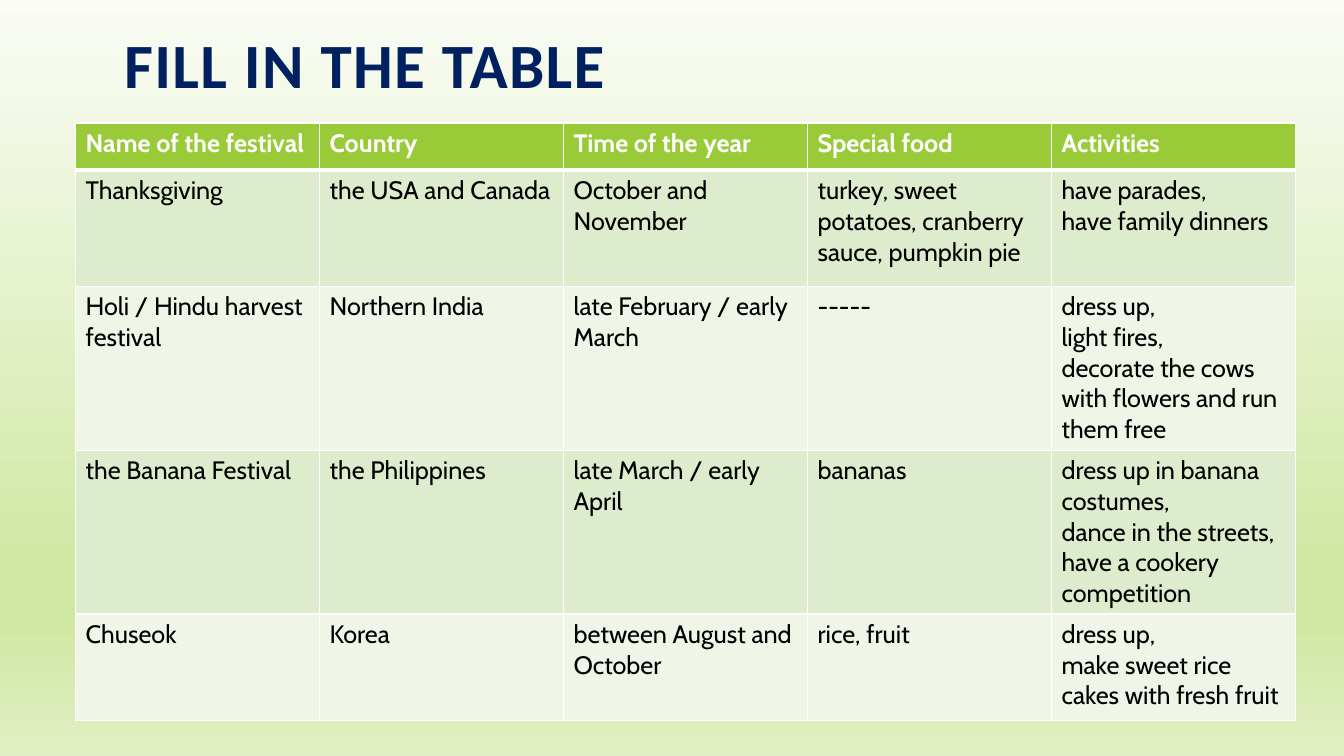
import pptx
import pptx.util
import pptx.dml.color
import pptx.enum.text
import pptx.oxml
import pptx.oxml.ns

RGBColor = pptx.dml.color.RGBColor

TITLE = "FILL IN THE TABLE"
HEADINGS = ["Name of the festival", "Country", "Time of the year", "Special food", "Activities"]
FESTIVALS = [
    ["Thanksgiving", "the USA and Canada", "October and November",
     "turkey, sweet potatoes, cranberry sauce, pumpkin pie",
     "have parades,\nhave family dinners"],
    ["Holi / Hindu harvest festival", "Northern India", "late February / early March",
     "-----",
     "dress up,\nlight fires,\ndecorate the cows with flowers and run them free"],
    ["the Banana Festival", "the Philippines", "late March / early April",
     "bananas",
     "dress up in banana costumes,\ndance in the streets,\nhave a cookery competition"],
    ["Chuseok", "Korea", "between August and October",
     "rice, fruit",
     "dress up,\nmake sweet rice cakes with fresh fruit"],
]

NAVY = RGBColor(0x00, 0x20, 0x60)
WHITE = RGBColor(0xFF, 0xFF, 0xFF)
BLACK = RGBColor(0x00, 0x00, 0x00)
GREEN = RGBColor(0x99, 0xCB, 0x38)
BANDS = [RGBColor(0xDE, 0xEC, 0xCE), RGBColor(0xEF, 0xF6, 0xE8)]
BACKDROP = [
    (0, RGBColor(0xFA, 0xFC, 0xF5)),
    (74, RGBColor(0xD1, 0xE8, 0xA5)),
    (83, RGBColor(0xD1, 0xE8, 0xA5)),
    (100, RGBColor(0xE0, 0xEF, 0xC3)),
]

TITLE_FONT = {"name": "Calibri", "size": pptx.util.Pt(45), "bold": True}
HEADING_FONT = {"name": "Cabin", "size": pptx.util.Pt(18), "bold": True}
BODY_FONT = {**HEADING_FONT, "bold": False}

ROW_HEIGHTS = [0.47, 1.15, 1.06, 1.06, 1.06]
TABLE_LEFT, TABLE_TOP, TABLE_WIDTH = 0.75, 1.22, 12.1
THIN, THICK = 1, 3


def style(font, values, color):
    for key, value in values.items():
        setattr(font, key, value)
    font.color.rgb = color


def paint_backdrop(slide):
    fill = slide.background.fill
    fill.gradient()
    fill.gradient_angle = 270
    stops = slide.element.find(".//" + pptx.oxml.ns.qn("a:gsLst"))
    for stop in list(stops):
        stops.remove(stop)
    for share, color in BACKDROP:
        stops.append(pptx.oxml.parse_xml(
            f'<a:gs {pptx.oxml.ns.nsdecls("a")} pos="{share * 1000}">'
            f'<a:srgbClr val="{color}"/></a:gs>'))


def add_borders(cell, widths):
    properties = cell._tc.get_or_add_tcPr()
    for side, width in widths.items():
        properties.append(pptx.oxml.parse_xml(
            f'<a:ln{side} {pptx.oxml.ns.nsdecls("a")} w="{pptx.util.Pt(width)}">'
            f'<a:solidFill><a:srgbClr val="{WHITE}"/></a:solidFill></a:ln{side}>'))


def add_title(slide):
    title = slide.shapes.title
    box = {"left": 1.13, "top": 0.41, "width": 10.63, "height": 0.58}
    for key, inches in box.items():
        setattr(title, key, pptx.util.Inches(inches))
    frame = title.text_frame
    frame.text = TITLE
    frame.word_wrap = True
    frame.auto_size = pptx.enum.text.MSO_AUTO_SIZE.NONE
    frame.vertical_anchor = pptx.enum.text.MSO_ANCHOR.MIDDLE
    heading = frame.paragraphs[0]
    heading.alignment = pptx.enum.text.PP_ALIGN.LEFT
    heading.line_spacing = 0.8
    run = heading.runs[0]
    style(run.font, TITLE_FONT, NAVY)
    run.font._element.set("spc", "100")


def add_festivals(slide):
    rows = [HEADINGS] + FESTIVALS
    area = [pptx.util.Inches(n) for n in (TABLE_LEFT, TABLE_TOP, TABLE_WIDTH, sum(ROW_HEIGHTS))]
    festivals = slide.shapes.add_table(len(rows), len(HEADINGS), *area).table
    for column in festivals.columns:
        column.width = pptx.util.Inches(TABLE_WIDTH / len(HEADINGS))
    for r, texts in enumerate(rows):
        festivals.rows[r].height = pptx.util.Inches(ROW_HEIGHTS[r])
        is_header = r == 0
        for c, text in enumerate(texts):
            cell = festivals.cell(r, c)
            add_borders(cell, {"L": THIN, "R": THIN,
                               "T": THICK if r == 1 else THIN,
                               "B": THICK if is_header else THIN})
            cell.fill.solid()
            cell.fill.fore_color.rgb = GREEN if is_header else BANDS[(r - 1) % 2]
            cell.text = text
            for paragraph in cell.text_frame.paragraphs:
                style(paragraph.runs[0].font,
                      HEADING_FONT if is_header else BODY_FONT,
                      WHITE if is_header else BLACK)


def main():
    deck = pptx.Presentation()
    deck.slide_width = pptx.util.Inches(13.33)
    deck.slide_height = pptx.util.Inches(7.5)
    slide = deck.slides.add_slide(deck.slide_layouts[5])
    paint_backdrop(slide)
    add_title(slide)
    add_festivals(slide)
    deck.save("out.pptx")


if __name__ == "__main__":
    main()
